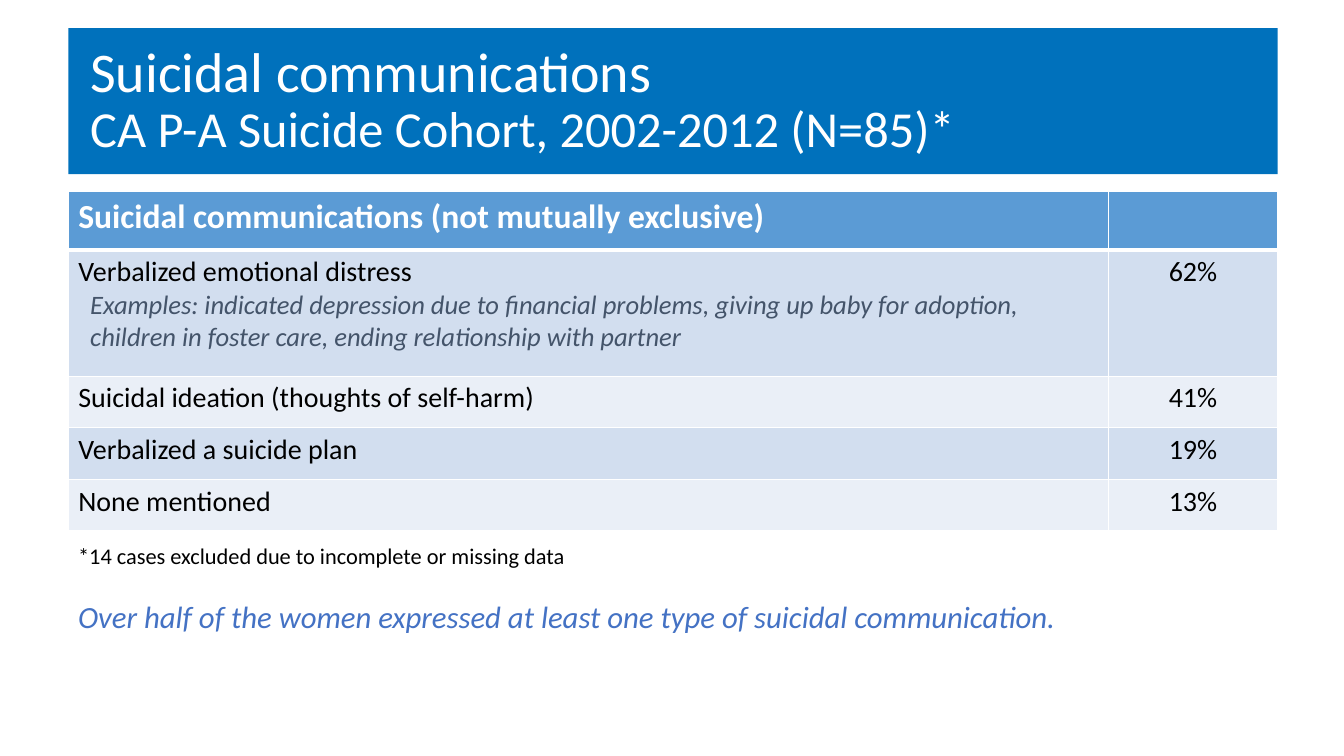
from dataclasses import dataclass

from lxml import etree
from pptx import Presentation
from pptx import util as u
from pptx.dml.color import RGBColor
from pptx.enum import text
from pptx.oxml import ns


@dataclass(frozen=True)
class Theme:
    font: str = "Calibri"
    white: str = "FFFFFF"
    black: str = "000000"
    banner: str = "0071BC"
    header: str = "5B9BD5"
    bands: tuple = ("D2DEEF", "EAEFF7")
    example: str = "44546A"
    takeaway: str = "4472C4"
    title_size: int = 40
    subtitle_size: int = 36
    header_size: int = 24
    body_size: int = 20
    example_size: int = 19
    footnote_size: int = 16
    takeaway_size: int = 22
    thin: int = 1
    thick: int = 3


T = Theme()
INDENT = u.Cm(0.3)
ROWS = [
    ("Verbalized emotional distress", "62%"),
    ("Suicidal ideation (thoughts of self-harm)", "41%"),
    ("Verbalized a suicide plan", "19%"),
    ("None mentioned", "13%"),
]
EXAMPLES = ("Examples: indicated depression due to financial problems, giving up baby "
            "for adoption, children in foster care, ending relationship with partner")


def style(font, size, color, bold=False, italic=False):
    font.name, font.size = T.font, u.Pt(size)
    font.bold, font.italic = bold, italic
    font.color.rgb = RGBColor.from_string(color)


def indent(p):
    pPr = p._p.get_or_add_pPr()
    pPr.set("marL", str(INDENT))
    pPr.set("indent", "0")


def fill(target, color):
    target.fill.solid()
    target.fill.fore_color.rgb = RGBColor.from_string(color)


def set_borders(cell, top, bottom):
    """Draw white lines around a cell; widths in points."""
    tcPr = cell._tc.get_or_add_tcPr()
    sides = {"lnL": T.thin, "lnR": T.thin, "lnT": top, "lnB": bottom}
    for i, (side, width) in enumerate(sides.items()):
        ln = etree.Element(ns.qn(f"a:{side}"), w=str(u.Pt(width)))
        line_fill = etree.SubElement(ln, ns.qn("a:solidFill"))
        etree.SubElement(line_fill, ns.qn("a:srgbClr"), val=T.white)
        tcPr.insert(i, ln)


def add_banner(s, left, top, width, height):
    sp = s.shapes.title
    sp.left, sp.top, sp.width, sp.height = left, top, width, height
    fill(sp, T.banner)
    tf = sp.text_frame
    tf.auto_size = text.MSO_AUTO_SIZE.NONE
    tf.vertical_anchor = text.MSO_ANCHOR.MIDDLE
    p = tf.paragraphs[0]
    p.alignment, p.line_spacing = text.PP_ALIGN.LEFT, 0.9
    indent(p)
    r = p.add_run()
    r.text = "Suicidal communications"
    style(r.font, T.title_size, T.white)
    p.add_line_break()
    r = p.add_run()
    r.text = "CA P-A Suicide Cohort, 2002-2012 (N=85)*"
    style(r.font, T.subtitle_size, T.white)


def add_results(s, left, top, width, height):
    table = s.shapes.add_table(len(ROWS) + 1, 2, left, top, width, height).table
    percent_width = u.Cm(4.27)
    table.columns[0].width = width - percent_width
    table.columns[1].width = percent_width

    # Row heights: header, row with examples, then equal rows
    header_height, example_height = u.Cm(1.47), u.Cm(3.18)
    plain_height = (height - header_height - example_height) // (len(ROWS) - 1)
    heights = [header_height, example_height] + [plain_height] * (len(ROWS) - 1)
    for row, row_height in zip(table.rows, heights):
        row.height = row_height

    # Header row
    for cell in table.rows[0].cells:
        fill(cell, T.header)
        set_borders(cell, T.thin, T.thick)
    p = table.cell(0, 0).text_frame.paragraphs[0]
    p.text = "Suicidal communications (not mutually exclusive)"
    style(p.font, T.header_size, T.white, bold=True)

    # Banded body rows
    for i, values in enumerate(ROWS):
        for j, value in enumerate(values):
            cell = table.cell(i + 1, j)
            fill(cell, T.bands[i % 2])
            set_borders(cell, T.thin if i else T.thick, T.thin)
            p = cell.text_frame.paragraphs[0]
            p.text = value
            p.alignment = text.PP_ALIGN.CENTER if j else text.PP_ALIGN.LEFT
            style(p.font, T.body_size, T.black)

    # Examples under the first finding
    p = table.cell(1, 0).text_frame.add_paragraph()
    p.text = EXAMPLES
    indent(p)
    style(p.font, T.example_size, T.example, italic=True)


def add_note(s, left, top, width, height, words, size, color, italic=False):
    tf = s.shapes.add_textbox(left, top, width, height).text_frame
    tf.word_wrap = True
    tf.auto_size = text.MSO_AUTO_SIZE.SHAPE_TO_FIT_TEXT
    p = tf.paragraphs[0]
    p.text = words
    style(p.font, size, color, italic=italic)


def main():
    prs = Presentation()
    prs.slide_width, prs.slide_height = u.Cm(33.87), u.Cm(19.05)
    s = prs.slides.add_slide(prs.slide_layouts[5])
    left, width = u.Cm(1.72), u.Cm(30.48)

    add_banner(s, left, u.Cm(0.71), width, u.Cm(3.68))
    add_results(s, left, u.Cm(4.83), width, u.Cm(8.55))
    add_note(s, left, u.Cm(13.54), u.Cm(18.69), u.Cm(0.94),
             "*14 cases excluded due to incomplete or missing data",
             T.footnote_size, T.black)
    add_note(s, left, u.Cm(14.94), width, u.Cm(1.19),
             "Over half of the women expressed at least one type of suicidal communication.",
             T.takeaway_size, T.takeaway, italic=True)
    prs.save("out.pptx")


if __name__ == "__main__":
    main()
